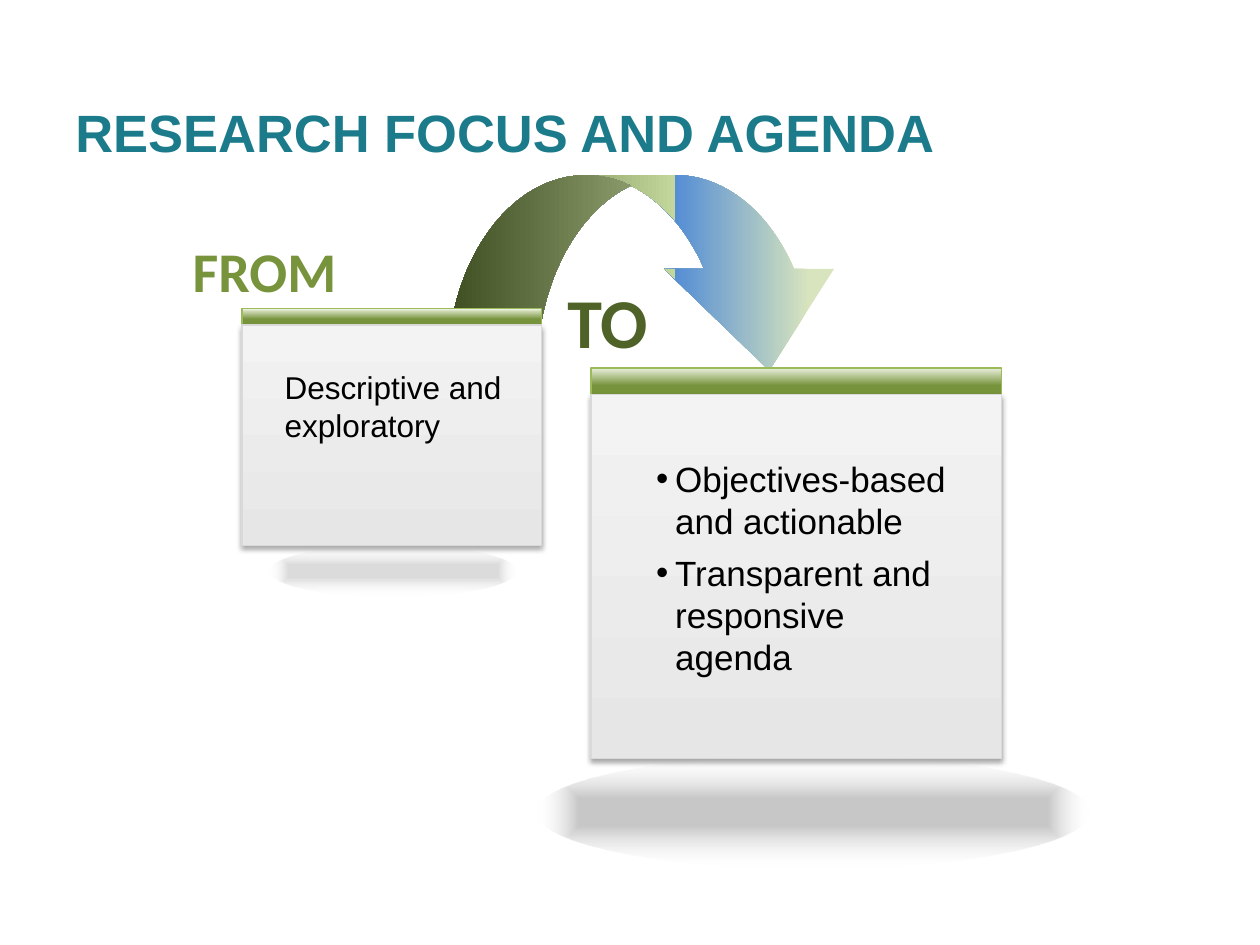
import pptx
import pptx.dml.color
import pptx.enum.shapes
import pptx.enum.text
import pptx.oxml
import pptx.oxml.ns
import pptx.util

Inches = pptx.util.Inches
Pt = pptx.util.Pt
RGBColor = pptx.dml.color.RGBColor
MSO_SHAPE = pptx.enum.shapes.MSO_SHAPE
MSO_ANCHOR = pptx.enum.text.MSO_ANCHOR
PP_ALIGN = pptx.enum.text.PP_ALIGN

TEAL = RGBColor(0x1B, 0x7B, 0x8B)
DARK_GREEN = RGBColor(0x4F, 0x62, 0x28)
GREEN = RGBColor(0x77, 0x93, 0x3C)
LINE_GREEN = RGBColor(0x9B, 0xBB, 0x59)
SOFT_GREEN = RGBColor(0xC3, 0xD6, 0x9B)
PALE_GREEN = RGBColor(0xD7, 0xE4, 0xBD)
MIST_GREEN = RGBColor(0xEB, 0xF1, 0xDE)
BLUE = RGBColor(0x55, 0x8E, 0xD5)
GRAY = RGBColor(0xD9, 0xD9, 0xD9)
PANEL_DARK = RGBColor(0xE6, 0xE6, 0xE6)
PANEL_LIGHT = RGBColor(0xF3, 0xF3, 0xF3)
BLACK = RGBColor(0, 0, 0)
WHITE = RGBColor(0xFF, 0xFF, 0xFF)


class SlideBuilder:
    heading_font = "Calibri"
    body_font = "Arial"
    namespace = pptx.oxml.ns.nsdecls("a")

    def __init__(self, slide):
        self.slide = slide

    def text(self, box, paragraphs, size, color, font=body_font, bold=False,
             align=PP_ALIGN.LEFT, anchor=MSO_ANCHOR.TOP, wrap=True, bullets=False):
        shape = self.slide.shapes.add_textbox(*map(Inches, box))
        frame = shape.text_frame
        frame.word_wrap = wrap
        frame.vertical_anchor = anchor
        for index, content in enumerate(paragraphs):
            paragraph = frame.add_paragraph() if index else frame.paragraphs[0]
            paragraph.alignment = align
            if bullets:
                self.bullet(paragraph)
            run = paragraph.add_run()
            run.text = content
            run.font.name = font
            run.font.size = Pt(size)
            run.font.bold = bold
            run.font.color.rgb = color

    def bullet(self, paragraph):
        paragraph.space_after = Pt(6)
        properties = paragraph._p.get_or_add_pPr()
        properties.set("marL", str(Inches(0.15)))
        properties.set("indent", str(Inches(-0.15)))
        for xml in (f'<a:buFont {self.namespace} typeface="Arial"/>',
                    f'<a:buChar {self.namespace} char="•"/>'):
            properties.append(pptx.oxml.parse_xml(xml))

    def gradient(self, shape, stops, angle=None):
        entries = "".join(
            f'<a:gs pos="{position * 1000}"><a:srgbClr val="{color}">'
            f'<a:alpha val="{alpha * 1000}"/></a:srgbClr></a:gs>'
            for position, color, alpha in stops)
        if angle is None:
            direction = ('<a:path path="shape"><a:fillToRect l="50000" t="50000" '
                         'r="50000" b="50000"/></a:path>')
        else:
            direction = f'<a:lin ang="{angle * 60000}" scaled="0"/>'
        shape.fill.background()
        properties = shape._element.spPr
        properties.replace(
            properties.find(pptx.oxml.ns.qn("a:noFill")),
            pptx.oxml.parse_xml(
                f'<a:gradFill {self.namespace} rotWithShape="1">'
                f"<a:gsLst>{entries}</a:gsLst>{direction}</a:gradFill>"))

    def shape(self, kind, box, stops, angle=None, line=None, parent=None):
        shape = (parent or self.slide).shapes.add_shape(kind, *map(Inches, box))
        shape.shadow.inherit = False
        self.gradient(shape, stops, angle)
        if line is None:
            shape.line.fill.background()
        else:
            shape.line.color.rgb = line
            shape.line.width = Pt(0.75)
        return shape

    def drop_shadow(self, shape):
        effects = shape._element.spPr.find(pptx.oxml.ns.qn("a:effectLst"))
        effects.append(pptx.oxml.parse_xml(
            f'<a:outerShdw {self.namespace} blurRad="{Pt(3.1)}" dist="{Pt(1.8)}" '
            f'dir="5400000" rotWithShape="0"><a:srgbClr val="{BLACK}">'
            '<a:alpha val="35000"/></a:srgbClr></a:outerShdw>'))

    def card(self, left, width, top, band_height, panel_top, panel_height):
        group = self.slide.shapes.add_group_shape()
        self.shape(MSO_SHAPE.RECTANGLE, (left, top, width, band_height),
                   [(44, GREEN, 100), (100, MIST_GREEN, 100)], 270, LINE_GREEN, group)
        panel = self.shape(MSO_SHAPE.RECTANGLE, (left, panel_top, width, panel_height),
                           [(0, PANEL_DARK, 100), (100, PANEL_LIGHT, 100)], 270, GRAY, group)
        self.drop_shadow(panel)

    def floor_shadow(self, box, alpha):
        self.shape(MSO_SHAPE.OVAL, box, [(24, BLACK, alpha), (100, WHITE, 0)])

    def curved_arrow(self, box, adjustments, stops):
        arrow = self.shape(MSO_SHAPE.CURVED_DOWN_ARROW, box, stops, 180)
        for index, value in enumerate(adjustments):
            arrow.adjustments[index] = value

    def label(self, box, content, size, color):
        self.text(box, [content], size, color, self.heading_font, bold=True,
                  align=PP_ALIGN.CENTER, wrap=False)


def main():
    presentation = pptx.Presentation()
    presentation.slide_width = Inches(10)
    presentation.slide_height = Inches(7.5)
    builder = SlideBuilder(presentation.slides.add_slide(presentation.slide_layouts[6]))

    builder.text((0.5, 0.42, 9.17, 1.25), ["RESEARCH FOCUS AND AGENDA"], 30, TEAL,
                 bold=True, anchor=MSO_ANCHOR.MIDDLE)
    builder.label((4.39, 2.16, 0.86, 0.77), "TO", 40, DARK_GREEN)
    builder.label((1.42, 1.83, 1.36, 0.64), "FROM", 32, GREEN)
    builder.curved_arrow((3.55, 1.39, 3.23, 1.55), (0.46, 0.87, 0.52),
                         [(11, PALE_GREEN, 100), (44, BLUE, 100),
                          (44, SOFT_GREEN, 100), (100, DARK_GREEN, 100)])
    builder.card(1.92, 2.38, 2.45, 0.15, 2.58, 1.75)
    builder.card(4.69, 3.26, 2.92, 0.25, 3.13, 2.89)
    builder.text((5.11, 3.58, 2.56, 1.87),
                 ["Objectives-based and actionable", "Transparent and responsive agenda"],
                 20, BLACK, bullets=True)
    builder.text((2.16, 2.87, 1.95, 0.71), ["Descriptive and exploratory"], 18, BLACK)
    builder.floor_shadow((4.26, 6, 4.39, 0.89), 22)
    builder.floor_shadow((2.14, 4.33, 1.96, 0.4), 14)
    presentation.save("out.pptx")


if __name__ == "__main__":
    main()
